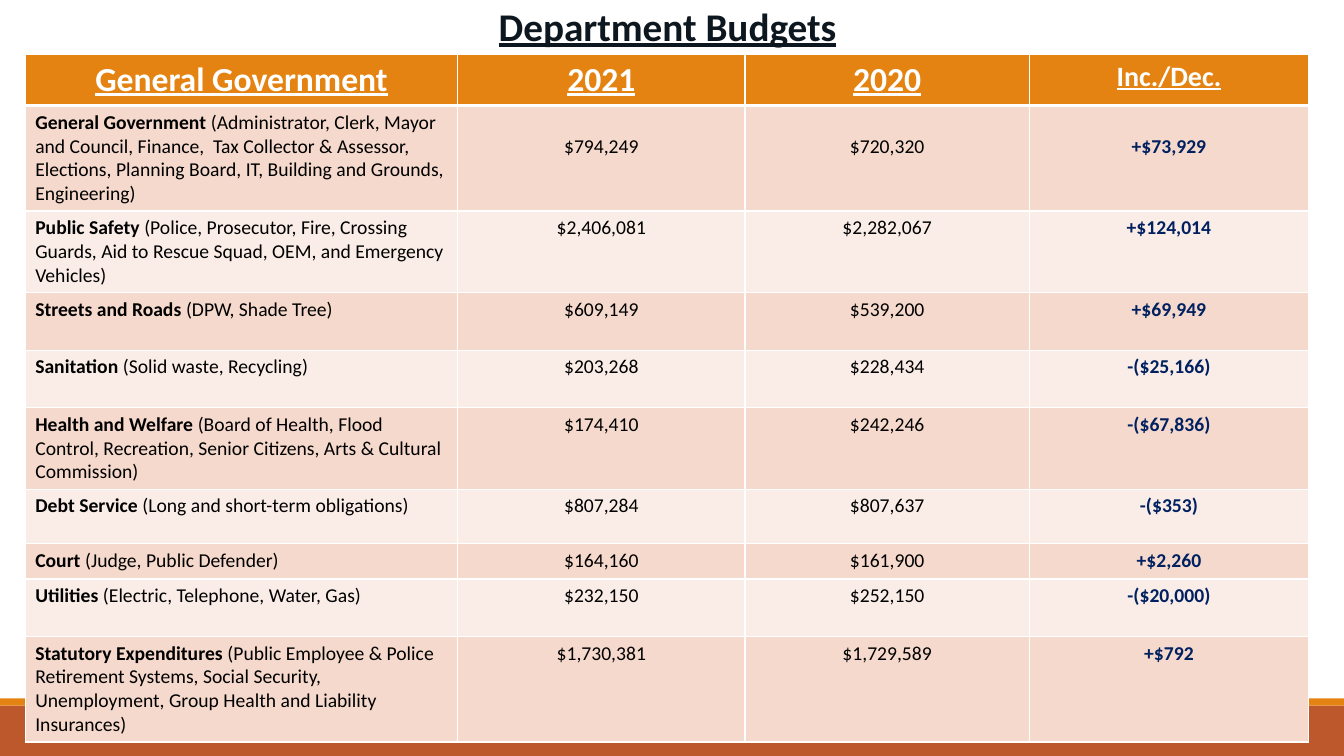
from lxml import etree
from pptx import Presentation, util as u
from pptx.dml.color import RGBColor
from pptx.enum import shapes, text
from pptx.oxml import ns

WHITE = RGBColor(0xFF, 0xFF, 0xFF)
BLACK = RGBColor(0x00, 0x00, 0x00)
INK = RGBColor(0x0D, 0x17, 0x1F)
NAVY = RGBColor(0x00, 0x20, 0x60)
ORANGE = RGBColor(0xE4, 0x83, 0x12)
RUST = RGBColor(0xBD, 0x58, 0x2C)
BANDS = RGBColor(0xF5, 0xD9, 0xCC), RGBColor(0xFA, 0xED, 0xE7)

HEADS = [("General Government", 24), ("2021", 24), ("2020", 24), ("Inc./Dec.", 20)]
WIDTHS = [4.29, 2.85, 2.82, 2.77]
BUDGETS = [
    (1.04, "General Government",
     "(Administrator, Clerk, Mayor and Council, Finance,  Tax Collector & Assessor, "
     "Elections, Planning Board, IT, Building and Grounds, Engineering)",
     "$794,249", "$720,320", "+$73,929"),
    (0.8, "Public Safety",
     "(Police, Prosecutor, Fire, Crossing Guards, Aid to Rescue Squad, OEM, "
     "and Emergency Vehicles)",
     "$2,406,081", "$2,282,067", "+$124,014"),
    (0.57, "Streets and Roads", "(DPW, Shade Tree)",
     "$609,149", "$539,200", "+$69,949"),
    (0.57, "Sanitation", "(Solid waste, Recycling)",
     "$203,268", "$228,434", "-($25,166)"),
    (0.8, "Health and Welfare",
     "(Board of Health, Flood Control, Recreation, Senior Citizens, "
     "Arts & Cultural Commission)",
     "$174,410", "$242,246", "-($67,836)"),
    (0.54, "Debt Service", "(Long and short-term obligations)",
     "$807,284", "$807,637", "-($353)"),
    (0.35, "Court", "(Judge, Public Defender)",
     "$164,160", "$161,900", "+$2,260"),
    (0.57, "Utilities", "(Electric, Telephone, Water, Gas)",
     "$232,150", "$252,150", "-($20,000)"),
    (1.04, "Statutory Expenditures",
     "(Public Employee & Police Retirement Systems, Social Security, "
     "Unemployment, Group Health and Liability Insurances)",
     "$1,730,381", "$1,729,589", "+$792"),
]


def write(para, words, size=14, color=BLACK, bold=False, line=False, center=True):
    para.alignment = text.PP_ALIGN.CENTER if center else text.PP_ALIGN.LEFT
    run = para.add_run()
    run.text = words
    font = run.font
    font.name, font.size = "Calibri", u.Pt(size)
    font.bold, font.underline = bold, line
    font.color.rgb = color


class Deck:
    def __init__(self):
        self.show = Presentation()
        self.show.slide_width = u.Inches(13.33)
        self.show.slide_height = u.Inches(7.5)
        self.slide = self.show.slides.add_slide(self.show.slide_layouts[5])

    def bar(self, top, height, color):
        bar = self.slide.shapes.add_shape(
            shapes.MSO_SHAPE.RECTANGLE, 0, u.Inches(top),
            self.show.slide_width, u.Inches(height))
        bar.shadow.inherit = False
        bar.fill.solid()
        bar.fill.fore_color.rgb = color
        bar.line.fill.background()

    def title(self, words):
        title = self.slide.shapes.title
        title.left, title.top = u.Inches(1.08), u.Inches(-0.03)
        title.width, title.height = u.Inches(11.08), u.Inches(0.57)
        frame = title.text_frame
        frame.word_wrap = True
        frame.auto_size = text.MSO_AUTO_SIZE.NONE
        frame.vertical_anchor = text.MSO_ANCHOR.MIDDLE
        write(frame.paragraphs[0], words, size=28, color=INK, bold=True, line=True)

    def cell(self, cell, fill, top=1, base=1):
        props = cell._tc.get_or_add_tcPr()
        for side, width in zip("LRTB", (1, 1, top, base)):
            edge = etree.SubElement(props, ns.qn(f"a:ln{side}"), w=str(u.Pt(width)))
            paint = etree.SubElement(edge, ns.qn("a:solidFill"))
            etree.SubElement(paint, ns.qn("a:srgbClr"), val=str(WHITE))
        cell.fill.solid()
        cell.fill.fore_color.rgb = fill
        return cell.text_frame.paragraphs[0]

    def table(self, left, top):
        heights = [0.49] + [row[0] for row in BUDGETS]
        table = self.slide.shapes.add_table(
            len(heights), len(WIDTHS), u.Inches(left), u.Inches(top),
            u.Inches(sum(WIDTHS)), u.Inches(sum(heights))).table
        for col, width in zip(table.columns, WIDTHS):
            col.width = u.Inches(width)
        for row, height in zip(table.rows, heights):
            row.height = u.Inches(height)
        for col, (head, size) in enumerate(HEADS):
            para = self.cell(table.cell(0, col), ORANGE, base=3)
            write(para, head, size=size, color=WHITE, bold=True, line=True)
        for row, (_, name, scope, *sums) in enumerate(BUDGETS, 1):
            fill = BANDS[(row - 1) % 2]
            edge = 3 if row == 1 else 1
            para = self.cell(table.cell(row, 0), fill, top=edge)
            write(para, name + " ", bold=True, center=False)
            write(para, scope, center=False)
            for col, value in enumerate(sums, 1):
                cell = table.cell(row, col)
                para = self.cell(cell, fill, top=edge)
                if row == 1:
                    cell.margin_top = u.Inches(0.29)
                last = col == len(sums)
                write(para, value, color=NAVY if last else BLACK, bold=last)


def main():
    deck = Deck()
    deck.bar(7, 0.5, RUST)
    deck.bar(6.93, 0.07, ORANGE)
    deck.title("Department Budgets")
    deck.table(0.25, 0.54)
    deck.show.save("out.pptx")


if __name__ == "__main__":
    main()
